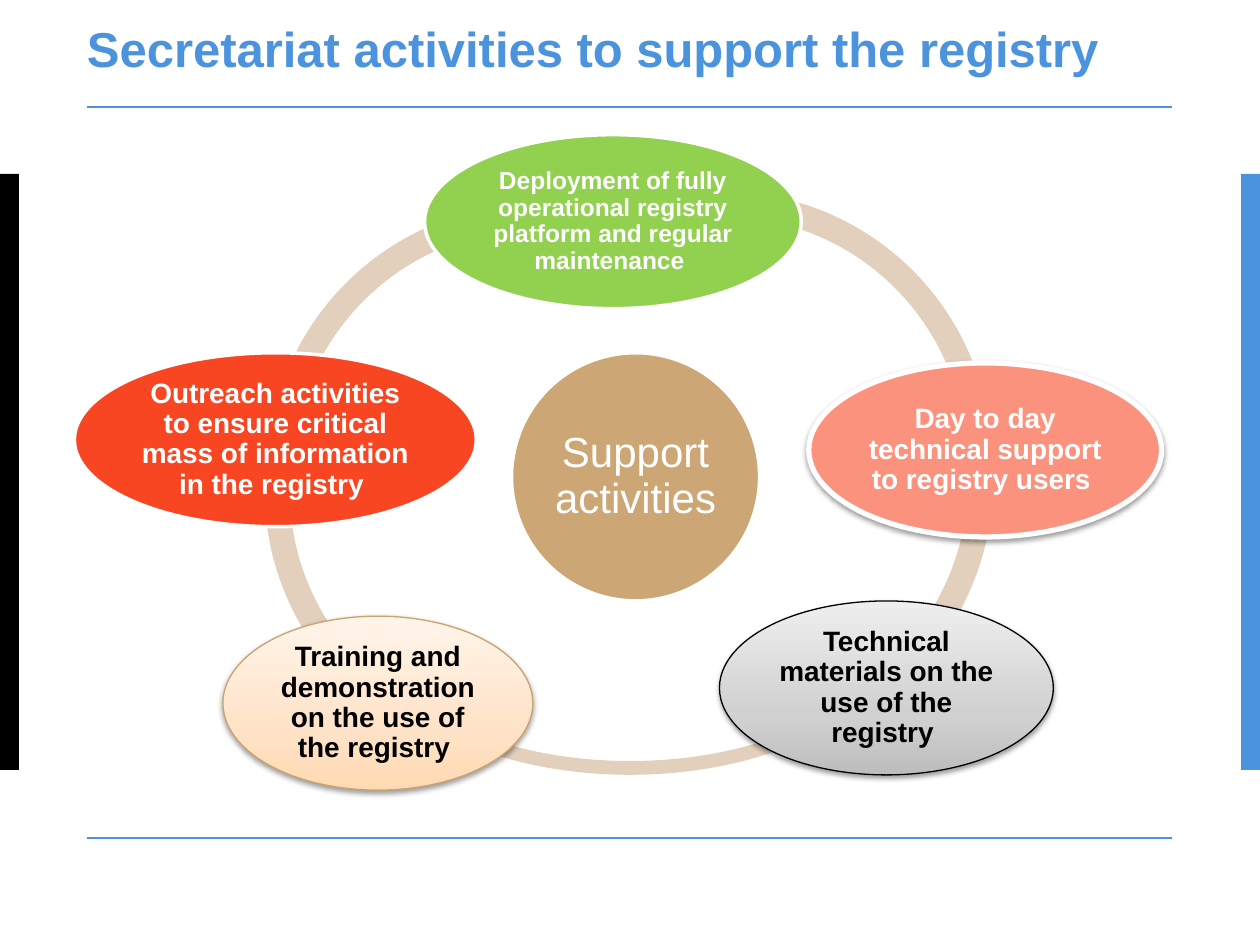
from dataclasses import dataclass
from typing import Optional

from lxml import etree
from pptx import Presentation
from pptx.dml.color import RGBColor
from pptx.enum.shapes import MSO_CONNECTOR, MSO_SHAPE
from pptx.enum.text import MSO_ANCHOR, PP_ALIGN
from pptx.oxml.ns import qn
from pptx.util import Pt

RECTANGLE, OVAL, BLOCK_ARC = MSO_SHAPE.RECTANGLE, MSO_SHAPE.OVAL, MSO_SHAPE.BLOCK_ARC
STRAIGHT = MSO_CONNECTOR.STRAIGHT
MIDDLE = MSO_ANCHOR.MIDDLE
LEFT, CENTER = PP_ALIGN.LEFT, PP_ALIGN.CENTER


@dataclass(frozen=True)
class Theme:
    font: str = "Arial"
    blue: str = "4B93DC"
    black: str = "000000"
    white: str = "FFFFFF"
    ring: str = "E2D0BC"
    hub: str = "CCA674"
    green: str = "92D050"
    salmon: str = "FB927D"
    red: str = "F84622"
    tan: str = "CAA36F"
    greys: tuple = ((0, "BDBDBD"), (35, "D1D1D1"), (100, "EEEEEE"))
    peaches: tuple = ((0, "FFD9B2"), (35, "FFE3C8"), (100, "FFF4EA"))
    title_size: float = 28
    hub_size: float = 24
    body_size: float = 16
    small_size: float = 14


THEME = Theme()
ARC_SIZE = 308.2
ARC_THICKNESS = 14.3 / ARC_SIZE
NODE_HEIGHT = 99.4


@dataclass(frozen=True)
class Arc:
    left: float
    top: float
    start: float  # degrees clockwise from the right
    end: float
    height: float = ARC_SIZE


@dataclass(frozen=True)
class Node:
    text: str
    left: float
    top: float
    width: float
    fill: Optional[str] = None
    gradient: tuple = ()  # (percent, colour) from bottom to top
    height: float = NODE_HEIGHT
    line: str = THEME.white
    line_width: float = 2
    color: str = THEME.white
    size: float = THEME.body_size
    bold: bool = True
    inset: float = 1.4
    shadow: bool = False


ARCS = [
    Arc(152.6, 116.6, 187.47, 286.8),
    Arc(151.2, 126, 126.14, 191.13),
    Arc(205.9, 272.2, 13.48, 163.02, height=170.6),
    Arc(259.2, 121, 353.14, 51.67),
    Arc(258.5, 109.4, 245.58, 357.39),
]

NODES = [
    Node("Support activities ", 292.3, 201.6, 141.8, THEME.hub, height=141.8,
         size=THEME.hub_size, bold=False, inset=2.2),
    Node("Deployment of fully operational registry platform and regular maintenance ",
         242.6, 77, 215.3, THEME.green, size=THEME.small_size),
    Node("Day to day technical support to registry users ",
         462.2, 207.4, 201.6, THEME.salmon, line_width=3, shadow=True),
    Node("Technical materials on the use of the registry ",
         411.1, 343.4, 190.8, gradient=THEME.greys, line=THEME.black,
         line_width=0.75, color=THEME.black, shadow=True),
    Node("Training and demonstration on the use of the registry ",
         127.4, 352.1, 177.1, gradient=THEME.peaches, line=THEME.tan,
         line_width=0.75, color=THEME.black, shadow=True),
    Node("Outreach activities to ensure critical mass of information in the registry ",
         42.5, 201.6, 229.7, THEME.red),
]


def rgb(color: str) -> RGBColor:
    return RGBColor.from_string(color)


def add_solid(slide, preset, left: float, top: float, width: float, height: float, color: str):
    solid = slide.shapes.add_shape(preset, Pt(left), Pt(top), Pt(width), Pt(height))
    solid.shadow.inherit = False
    solid.fill.solid()
    solid.fill.fore_color.rgb = rgb(color)
    solid.line.fill.background()
    return solid


def add_rule(slide, y: float) -> None:
    rule = slide.shapes.add_connector(STRAIGHT, Pt(49.7), Pt(y), Pt(669.6), Pt(y))
    rule.line.color.rgb = rgb(THEME.blue)
    rule.line.width = Pt(1)
    etree.SubElement(rule._element.spPr, qn("a:effectLst"))


def add_arc(slide, arc: Arc) -> None:
    segment = add_solid(slide, BLOCK_ARC, arc.left, arc.top, ARC_SIZE, arc.height, THEME.ring)
    # Angles are stored in 60000ths of a degree, adjustments in 100000ths
    segment.adjustments[0] = arc.start * 0.6
    segment.adjustments[1] = arc.end * 0.6
    segment.adjustments[2] = ARC_THICKNESS


def set_gradient(oval, stops: tuple) -> None:
    oval.fill.gradient()
    oval.fill.gradient_angle = 90
    stop_list = oval._element.spPr.find(".//" + qn("a:gsLst"))
    for old_stop in list(stop_list):
        stop_list.remove(old_stop)
    for percent, color in stops:
        stop = etree.SubElement(stop_list, qn("a:gs"), pos=str(percent * 1000))
        etree.SubElement(stop, qn("a:srgbClr"), val=color)


def add_shadow(oval) -> None:
    effects = oval._element.spPr.find(qn("a:effectLst"))
    shadow = etree.SubElement(effects, qn("a:outerShdw"), blurRad=str(Pt(3.1)),
                              dist=str(Pt(1.6)), dir="5400000", rotWithShape="0")
    color = etree.SubElement(shadow, qn("a:srgbClr"), val=THEME.black)
    etree.SubElement(color, qn("a:alpha"), val="38000")


def set_insets(frame, inset: float) -> None:
    frame.margin_left = frame.margin_right = Pt(inset)
    frame.margin_top = frame.margin_bottom = Pt(inset)


def style_text(paragraph, size: float, color: str, bold: bool) -> None:
    for run in paragraph.runs:
        run.font.name = THEME.font
        run.font.size = Pt(size)
        run.font.bold = bold
        run.font.color.rgb = rgb(color)


def add_node(slide, node: Node) -> None:
    oval = add_solid(slide, OVAL, node.left, node.top, node.width, node.height,
                     node.fill or THEME.white)
    if node.gradient:
        set_gradient(oval, node.gradient)
    oval.line.color.rgb = rgb(node.line)
    oval.line.width = Pt(node.line_width)
    if node.shadow:
        add_shadow(oval)
    frame = oval.text_frame
    frame.word_wrap = True
    frame.vertical_anchor = MIDDLE
    set_insets(frame, node.inset)
    frame.text = node.text
    label = frame.paragraphs[0]
    label.alignment = CENTER
    label.line_spacing = 0.9
    style_text(label, node.size, node.color, node.bold)


def set_title(slide, text: str) -> None:
    title = slide.shapes.title
    title.left, title.top, title.width, title.height = Pt(49.7), Pt(24.5), Pt(620), Pt(24.5)
    frame = title.text_frame
    frame.word_wrap = True
    frame.vertical_anchor = MIDDLE
    set_insets(frame, 0)
    frame.text = text
    heading = frame.paragraphs[0]
    heading.alignment = LEFT
    heading.line_spacing = Pt(15)
    style_text(heading, THEME.title_size, THEME.blue, True)


def main() -> None:
    deck = Presentation()
    deck.slide_width, deck.slide_height = Pt(720), Pt(540)
    slide = deck.slides.add_slide(deck.slide_layouts[5])

    # Side bars, rules and title
    for left, color in ((0, THEME.black), (709.2, THEME.blue)):
        add_solid(slide, RECTANGLE, left, 99.4, 10.8, 340.6, color)
    for y in (61.2, 478.8):
        add_rule(slide, y)
    set_title(slide, "Secretariat activities to support the registry")

    # Ring first, then the hub and the activities over it
    for arc in ARCS:
        add_arc(slide, arc)
    for node in NODES:
        add_node(slide, node)

    deck.save("out.pptx")


if __name__ == "__main__":
    main()
